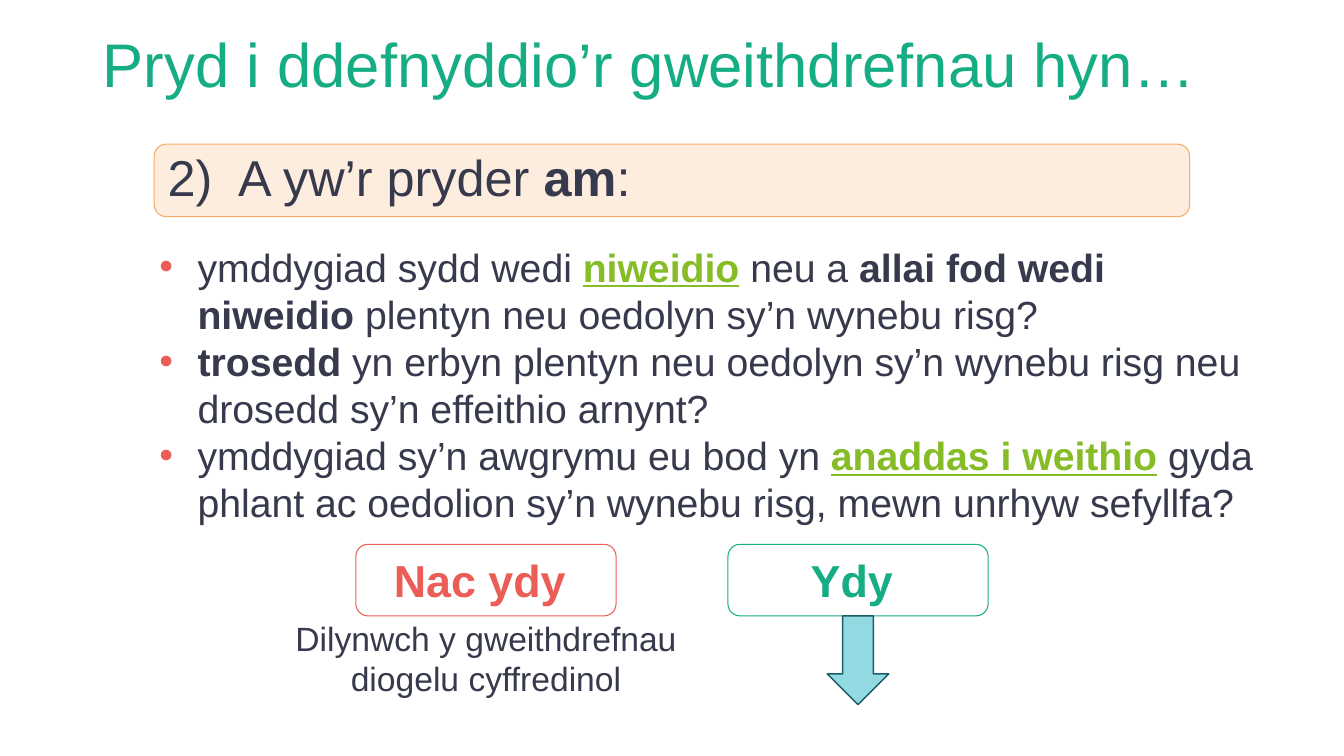
"""Build a slide on when to use the procedures, with a yes/no decision."""
from lxml import etree
from pptx import Presentation
from pptx.dml.color import RGBColor
from pptx.enum.shapes import MSO_SHAPE
from pptx.enum.text import MSO_ANCHOR, MSO_AUTO_SIZE, PP_ALIGN
from pptx.oxml.ns import qn
from pptx.util import Inches, Pt

ROUNDED, DOWN_ARROW = MSO_SHAPE.ROUNDED_RECTANGLE, MSO_SHAPE.DOWN_ARROW
TOP, MIDDLE = MSO_ANCHOR.TOP, MSO_ANCHOR.MIDDLE
LEFT, CENTER = PP_ALIGN.LEFT, PP_ALIGN.CENTER
COLORS = {
    "green": "16AD85", "lime": "86BC25", "red": "EB5E57", "dark": "37394C",
    "peach": "FDEDDE", "orange": "F7AB64", "aqua": "92DAE2", "teal": "1B5D64",
}
PLAIN = {"color": "dark"}
BOLD = {"color": "dark", "bold": True}
KEY = {"color": "lime", "bold": True, "underline": True}


def write(shape, paragraphs, size, anchor=TOP, align=LEFT, spacing=1.0, hanging=0, bullet=None):
    """Fill a shape with paragraphs, each a list of (text, format) runs."""
    frame = shape.text_frame
    settings = {"word_wrap": True, "auto_size": MSO_AUTO_SIZE.NONE, "vertical_anchor": anchor}
    for name, value in settings.items():
        setattr(frame, name, value)
    for index, runs in enumerate(paragraphs):
        paragraph = frame.add_paragraph() if index else frame.paragraphs[0]
        properties = paragraph._p.get_or_add_pPr()
        properties.set("marL", str(Inches(hanging)))
        properties.set("indent", str(-Inches(hanging)))
        if bullet:
            bullet_color = etree.SubElement(properties, qn("a:buClr"))
            etree.SubElement(bullet_color, qn("a:srgbClr"), val=COLORS[bullet])
            etree.SubElement(properties, qn("a:buFont"), typeface="Arial")
            etree.SubElement(properties, qn("a:buChar"), char="•")
        layout = {"alignment": align, "line_spacing": spacing, "space_before": Pt(0)}
        for name, value in layout.items():
            setattr(paragraph, name, value)
        for text, style in runs:
            run = paragraph.add_run()
            run.text = text
            run.font.color.rgb = RGBColor.from_string(COLORS[style["color"]])
            font = {"name": "Arial", "size": Pt(size), "bold": style.get("bold", False),
                    "underline": style.get("underline", False)}
            for name, value in font.items():
                setattr(run.font, name, value)


def add_block(kind, box, fill, line, width=0.75):
    """Add a preset shape with a flat fill and outline."""
    shape = slide.shapes.add_shape(kind, *map(Inches, box))
    shape.shadow.inherit = False
    if fill:
        shape.fill.solid()
        shape.fill.fore_color.rgb = RGBColor.from_string(COLORS[fill])
    else:
        shape.fill.background()
    shape.line.color.rgb = RGBColor.from_string(COLORS[line])
    shape.line.width = Pt(width)
    return shape


presentation = Presentation()
presentation.slide_width, presentation.slide_height = Inches(13.33), Inches(7.5)
slide = presentation.slides.add_slide(presentation.slide_layouts[1])
title, body = slide.placeholders
for placeholder, box in ((title, (0.92, 0.02, 11.5, 1.3)), (body, (1.48, 2.36, 11.2, 2.93))):
    for name, value in zip(("left", "top", "width", "height"), box):
        setattr(placeholder, name, Inches(value))

write(title, [[("Pryd i ddefnyddio’r gweithdrefnau hyn…", {"color": "green"})]],
      44, anchor=MIDDLE, spacing=0.9)

question = add_block(ROUNDED, (1.53, 1.43, 10.27, 0.72), "peach", "orange")
write(question, [[("2)\tA yw’r pryder ", PLAIN), ("am", BOLD), (":", PLAIN)]],
      36, anchor=MIDDLE, spacing=0.9, hanging=0.7)

concerns = [
    [("ymddygiad sydd wedi ", PLAIN), ("niweidio", KEY), (" neu a ", PLAIN),
     ("allai fod wedi niweidio ", BOLD), ("plentyn neu oedolyn sy’n wynebu risg?", PLAIN)],
    [("trosedd ", BOLD),
     ("yn erbyn plentyn neu oedolyn sy’n wynebu risg neu drosedd sy’n effeithio arnynt?", PLAIN)],
    [("ymddygiad sy’n awgrymu eu bod yn ", PLAIN), ("anaddas i weithio", KEY),
     (" gyda phlant ac oedolion sy’n wynebu risg, mewn unrhyw sefyllfa?", PLAIN)],
]
write(body, concerns, 28, hanging=0.38, bullet="red")

advice = slide.shapes.add_textbox(*map(Inches, (2.79, 6.08, 4.06, 0.91)))
write(advice, [[("Dilynwch y gweithdrefnau diogelu cyffredinol", PLAIN)]], 24, align=CENTER)

answer_top, answer_width, answer_height = 5.4, 2.58, 0.71
for text, left, color in (("Nac ydy", 3.53, "red"), ("Ydy", 7.22, "green")):
    answer = add_block(ROUNDED, (left, answer_top, answer_width, answer_height), None, color)
    write(answer, [[(text, {"color": color, "bold": True})]], 32, align=CENTER)
    answer.text_frame.margin_right = Inches(0.22)

arrow_width = 0.61
arrow_left = left + (answer_width - arrow_width) / 2
add_block(DOWN_ARROW, (arrow_left, answer_top + answer_height, arrow_width, 0.88),
          "aqua", "teal", 1)

presentation.save("out.pptx")
